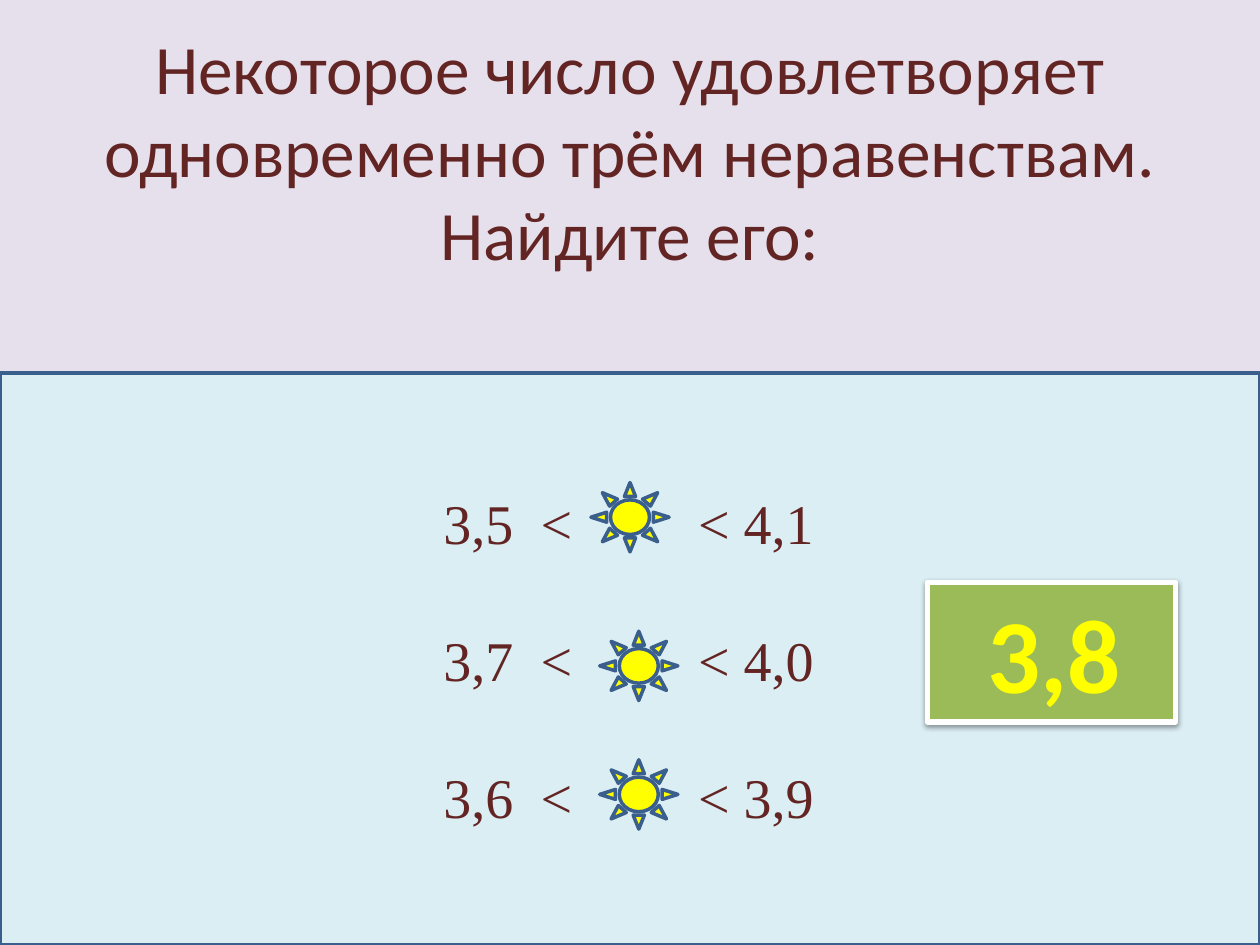
from lxml.etree import SubElement
from pptx import Presentation
from pptx.dml.color import RGBColor
from pptx.enum.shapes import MSO_SHAPE as Shape
from pptx.enum.text import MSO_ANCHOR as Anchor, PP_ALIGN as Align
from pptx.oxml import parse_xml
from pptx.oxml.ns import nsdecls, qn
from pptx.util import Inches, Pt

LILAC = RGBColor(0xE6, 0xE0, 0xEC)
SKY = RGBColor(0xDB, 0xEE, 0xF4)
BLUE = RGBColor(0x3A, 0x5F, 0x8C)
MAROON = RGBColor(0x63, 0x25, 0x23)
YELLOW = RGBColor(0xFF, 0xFF, 0x00)
GREEN = RGBColor(0x9B, 0xBB, 0x59)
WHITE = RGBColor(0xFF, 0xFF, 0xFF)

TITLE = "Некоторое число удовлетворяет одновременно трём неравенствам. Найдите его:"
LIMITS = [("3,5", "4,1"), ("3,7", "4,0"), ("3,6", "3,9")]
SUNS = [(4.69, 3.83), (4.76, 5.01), (4.76, 6.03)]
TABS = [0.77, 2.02]


def add_box(slide, kind, area, fill, line=None, width=2):
    box = slide.shapes.add_shape(kind, *map(Inches, area))
    box.shadow.inherit = False
    box.fill.solid()
    box.fill.fore_color.rgb = fill
    if line is None:
        box.line.fill.background()
    else:
        box.line.color.rgb = line
        box.line.width = Pt(width)
    return box


def set_text(box, text, font, size, color, align=Align.LEFT, anchor=Anchor.MIDDLE, bold=False):
    frame = box.text_frame
    frame.word_wrap = True
    frame.vertical_anchor = anchor
    frame.text = text
    for para in frame.paragraphs:
        para.alignment = align
        for run in para.runs:
            run.font.name = font
            run.font.size = Pt(size)
            run.font.bold = bold
            run.font.color.rgb = color
    return frame


def add_tabs(para, stops):
    tabs = SubElement(para._p.get_or_add_pPr(), qn("a:tabLst"))
    for stop in stops:
        SubElement(tabs, qn("a:tab"), pos=str(Inches(stop)), algn="l")


def add_shadow(box):
    """Drop a soft black shadow straight below the box."""
    effects = box._element.spPr.find(qn("a:effectLst"))
    effects.append(parse_xml(
        f'<a:outerShdw {nsdecls("a")} blurRad="{Pt(3.1)}" dist="{Pt(1.6)}" '
        'dir="5400000" rotWithShape="0"><a:srgbClr val="000000">'
        '<a:alpha val="38000"/></a:srgbClr></a:outerShdw>'))


def add_title(slide):
    box = add_box(slide, Shape.RECTANGLE, (0, 0, 10, 2.96), LILAC)
    frame = set_text(box, TITLE, "Calibri", 39.6, MAROON, Align.CENTER)
    frame.margin_bottom = Inches(0.63)


def add_limits(slide):
    box = add_box(slide, Shape.RECTANGLE, (0, 2.96, 10, 4.54), SKY, BLUE)
    text = "\n".join(f"{low}\t<\t< {high}" for low, high in LIMITS)
    frame = set_text(box, text, "Times New Roman", 32, MAROON)
    frame.margin_left = Inches(3.52)
    for row, para in enumerate(frame.paragraphs):
        para.space_before = Pt(40 if row else 0)
        add_tabs(para, TABS)


def add_answer(slide):
    box = add_box(slide, Shape.RECTANGLE, (7.36, 4.62, 1.97, 1.11), GREEN, WHITE, 3)
    add_shadow(box)
    frame = set_text(box, "3,8", "Calibri", 60, YELLOW, anchor=Anchor.TOP, bold=True)
    frame.margin_left = Inches(0.48)


def main():
    deck = Presentation()
    deck.slide_width, deck.slide_height = Inches(10), Inches(7.5)
    slide = deck.slides.add_slide(deck.slide_layouts[6])
    add_title(slide)
    add_limits(slide)
    for left, top in SUNS:
        add_box(slide, Shape.SUN, (left, top, 0.62, 0.55), YELLOW, BLUE)
    add_answer(slide)
    deck.save("out.pptx")


if __name__ == "__main__":
    main()
